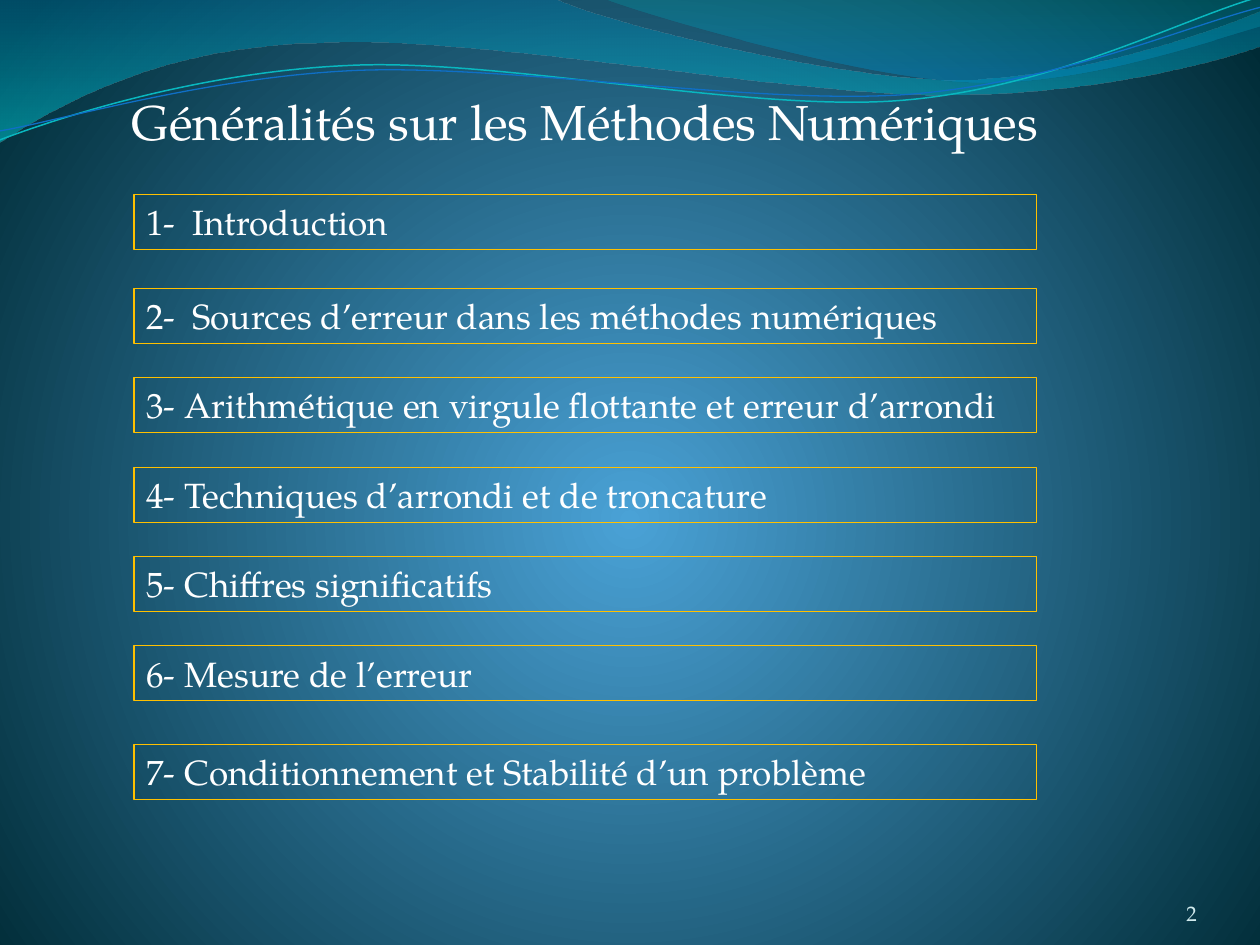
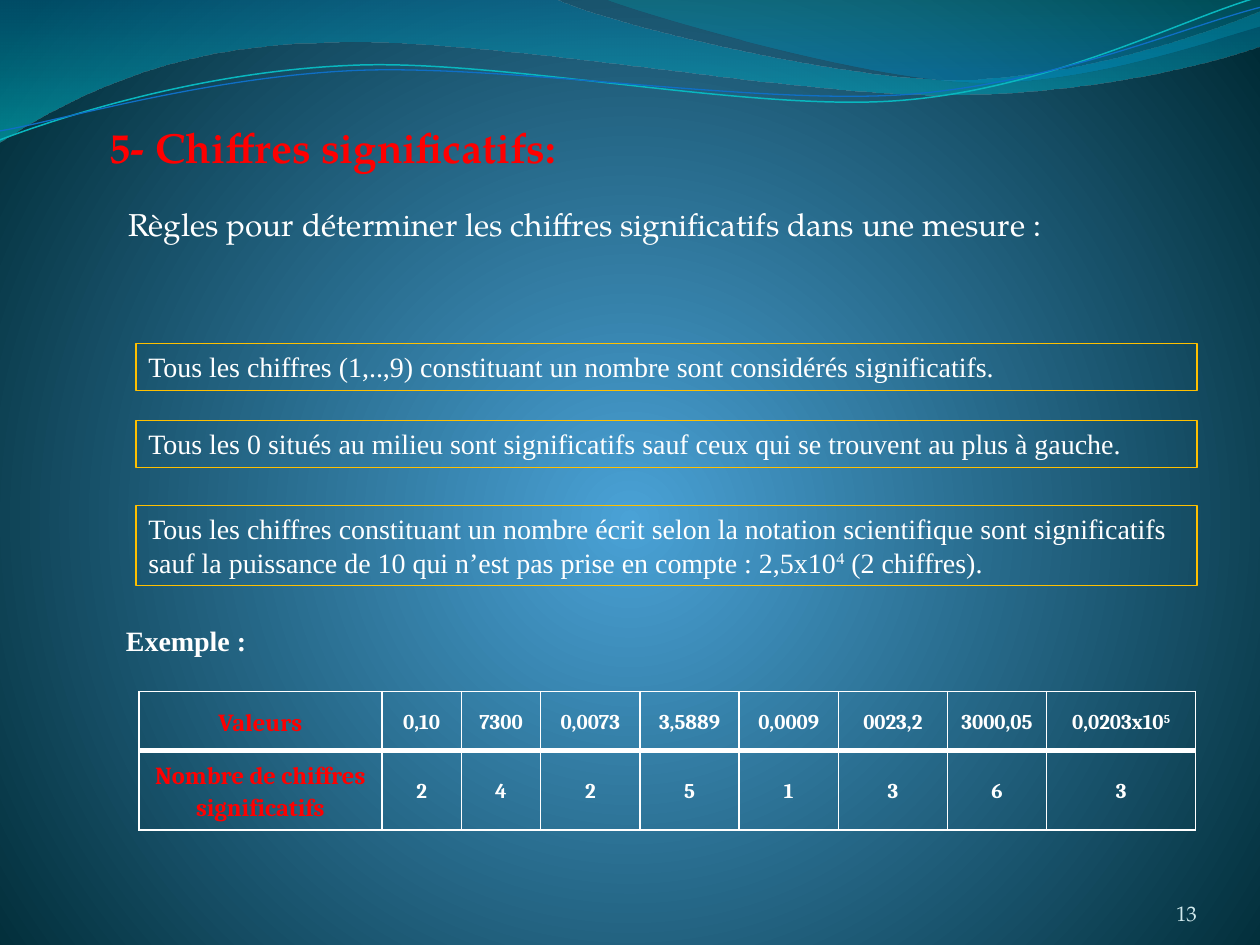
from dataclasses import dataclass

from lxml.etree import SubElement
from pptx import Presentation
from pptx.dml.color import RGBColor
from pptx.enum.shapes import MSO_SHAPE
from pptx.enum.text import MSO_ANCHOR, MSO_AUTO_SIZE, PP_ALIGN
from pptx.oxml.ns import qn
from pptx.util import Cm, Pt


@dataclass(frozen=True)
class Theme:
    white: str = "FFFFFF"
    red: str = "FF0000"
    gold: str = "FFC000"
    pale: str = "D1EAED"
    background: tuple = ((0, "4AA2D6", 100), (100, "002B36", 100))
    main_font: str = "TeX Gyre Pagella"
    rule_font: str = "Times New Roman"
    table_font: str = "Cambria"
    title: int = 28
    heading: int = 24
    chapter: int = 20
    intro: int = 18
    rule: int = 16
    table_head: int = 14
    small: int = 12


THEME = Theme()

# Positions in centimetres; text between two ^ is raised.
OUTLINE_TITLE = "Généralités sur les Méthodes Numériques"
CHAPTERS = [
    (3.92, "1-\tIntroduction"),
    (5.82, "2-\tSources d’erreur dans les méthodes numériques"),
    (7.61, "3- Arithmétique en virgule flottante et erreur d’arrondi"),
    (9.42, "4- Techniques d’arrondi et de troncature"),
    (11.22, "5- Chiffres significatifs"),
    (13.02, "6- Mesure de l’erreur"),
    (15.01, "7- Conditionnement et Stabilité d’un problème"),
]
NUMBER_TAB = 0.93

DIGITS_TITLE = "5- Chiffres significatifs:"
DIGITS_INTRO = "Règles pour déterminer les chiffres significatifs dans une mesure :"
RULES = [
    (6.93, 0.94, "Tous les chiffres (1,..,9) constituant un nombre sont considérés significatifs."),
    (8.48, 0.94, "Tous les 0 situés au milieu sont significatifs sauf ceux qui se trouvent "
                 "au plus à gauche."),
    (10.19, 1.62, "Tous les chiffres constituant un nombre écrit selon la notation scientifique "
                  "sont significatifs sauf la puissance de 10 qui n’est pas prise en compte : "
                  "2,5x10^4^ (2 chiffres)."),
]
EXAMPLE_LABEL = "Exemple :"
EXAMPLES = [
    ["Valeurs", "0,10", "7300", "0,0073", "3,5889", "0,0009", "0023,2", "3000,05", "0,0203x10^5^"],
    ["Nombre de chiffres significatifs", "2", "4", "2", "5", "1", "3", "6", "3"],
]
COLUMN_WIDTHS = [4.9, 1.6, 1.6, 2, 2, 2, 2.2, 2, 3]
ROW_HEIGHTS = [1.19, 1.6]

# Each wave: start, then steps of one point (line) or three points (Bézier curve).
WAVE_BANDS = [
    ((0, 0),
     [[(11.18, -0.03)],
      [(12.09, 0.43), (16.87, 1.6), (19.25, 1.6)],
      [(21.67, 1.6), (24.33, 0.66), (25.4, 0.23)],
      [(25.43, 0.91)],
      [(24.97, 1.12), (22.1, 1.93), (18.95, 1.91)],
      [(15.8, 1.91), (9.7, 0.71), (6.53, 0.86)],
      [(3.28, 0.89), (1.17, 2.11), (-0.03, 2.87)],
      [(0, 0)]],
     ((0, "0074A0", 45), (100, "00C4CD", 55)), 90),
    ((12.17, -0.03),
     [[(12.93, 0.28), (17.32, 1.57), (19.53, 1.65)],
      [(21.74, 1.75), (24.41, 0.81), (25.4, 0.53)],
      [(25.4, 0)],
      [(12.17, -0.03)]],
     ((20, "008ABF", 45), (100, "00A0A8", 30)), 270),
]
WAVE_LINES = [
    ((0, 2.82),
     [[(1.22, 2.36), (4.01, 1.45), (7.04, 1.32)],
      [(10.03, 1.17), (15.06, 2.26), (18.11, 2.03)],
      [(21.16, 1.8), (23.83, 0.38), (25.35, -0.05)]], "09B7BF", 0.85),
    ((0, 2.64),
     [[(1.19, 2.44), (4.17, 1.55), (7.19, 1.42)],
      [(10.24, 1.3), (15.16, 2.11), (18.21, 1.91)],
      [(21.23, 1.7), (23.9, 0.53), (25.4, 0.15)]], "0F6FC6", 0.75),
]


def color(value):
    return RGBColor.from_string(value)


def set_gradient(properties, stops, angle=None):
    """Replace the empty fill by a gradient: linear at an angle, else circular."""
    gradient = properties.makeelement(qn("a:gradFill"), {"rotWithShape": "1"})
    stop_list = SubElement(gradient, qn("a:gsLst"))
    for position, value, opacity in stops:
        stop = SubElement(stop_list, qn("a:gs"), pos=str(position * 1000))
        stop_color = SubElement(stop, qn("a:srgbClr"), val=value)
        if opacity < 100:
            SubElement(stop_color, qn("a:alpha"), val=str(opacity * 1000))
    if angle is None:
        circle = SubElement(gradient, qn("a:path"), {"path": "circle"})
        SubElement(circle, qn("a:fillToRect"), l="50000", t="55000", r="50000", b="45000")
    else:
        SubElement(gradient, qn("a:lin"), ang=str(angle * 60000), scaled="1")
    properties.replace(properties.find(qn("a:noFill")), gradient)


def add_wave(slide, start, steps, close):
    """Lay out every point with line segments, then merge triples into curves."""
    builder = slide.shapes.build_freeform(Cm(start[0]), Cm(start[1]))
    points = [(Cm(x), Cm(y)) for step in steps for x, y in step]
    builder.add_line_segments(points, close=close)
    shape = builder.convert_to_shape()
    segments = iter(list(shape._element.iter(qn("a:lnTo"))))
    for step in steps:
        members = [next(segments) for _ in step]
        if len(members) == 3:
            curve = members[0].makeelement(qn("a:cubicBezTo"), {})
            members[0].addprevious(curve)
            for member in members:
                curve.append(member[0])
                member.getparent().remove(member)
    shape.shadow.inherit = False
    shape.fill.background()
    return shape


def write(text_frame, text, size, font=THEME.main_font, ink=THEME.white, bold=False,
          alignment=PP_ALIGN.LEFT):
    paragraph = text_frame.paragraphs[0]
    paragraph.alignment = alignment
    if "\t" in text:
        tabs = SubElement(paragraph._p.get_or_add_pPr(), qn("a:tabLst"))
        SubElement(tabs, qn("a:tab"), pos=str(Cm(NUMBER_TAB)), algn="l")
    for index, piece in enumerate(text.split("^")):
        run = paragraph.add_run()
        run.text = piece
        run.font.name = font
        run.font.size = Pt(size)
        run.font.bold = bold
        run.font.color.rgb = color(ink)
        if index % 2:
            run.font._element.set("baseline", "30000")
    return paragraph


def add_text(slide, place, text, size, **style):
    box = slide.shapes.add_textbox(*map(Cm, place))
    box.text_frame.word_wrap = True
    write(box.text_frame, text, size, **style)
    return box


def add_framed_text(slide, place, text, size, line_width, **style):
    shape = slide.shapes.add_shape(MSO_SHAPE.RECTANGLE, *map(Cm, place))
    shape.shadow.inherit = False
    shape.fill.background()
    shape.line.color.rgb = color(THEME.gold)
    shape.line.width = Pt(line_width)
    text_frame = shape.text_frame
    text_frame.word_wrap = True
    text_frame.vertical_anchor = MSO_ANCHOR.TOP
    text_frame.auto_size = MSO_AUTO_SIZE.SHAPE_TO_FIT_TEXT
    write(text_frame, text, size, **style)


def decorate_master(presentation, slide):
    """Give the master its background and the waves, which are drawn on a slide first."""
    master = presentation.slide_master
    master.background.fill.background()
    set_gradient(master.element.find(f".//{qn('p:bgPr')}"), THEME.background)
    waves = []
    for start, steps, stops, angle in WAVE_BANDS:
        band = add_wave(slide, start, steps, close=True)
        band.line.fill.background()
        set_gradient(band._element.spPr, stops, angle)
        waves.append(band)
    for start, steps, ink, width in WAVE_LINES:
        wave = add_wave(slide, start, steps, close=False)
        wave.line.color.rgb = color(ink)
        wave.line.width = Pt(width)
        waves.append(wave)
    for wave in waves:
        master.shapes._spTree.append(wave._element)


def add_slide(presentation, number):
    """Add a blank slide with its page number."""
    slide = presentation.slides.add_slide(presentation.slide_layouts[6])
    box = add_text(slide, (22.02, 17.65, 2.11, 1.02), str(number), THEME.small,
                   ink=THEME.pale, alignment=PP_ALIGN.RIGHT)
    text_frame = box.text_frame
    text_frame.vertical_anchor = MSO_ANCHOR.BOTTOM
    text_frame.margin_left = text_frame.margin_right = 0
    text_frame.margin_top = text_frame.margin_bottom = 0
    return slide


def set_borders(cell, widths):
    properties = cell._tc.get_or_add_tcPr()
    for index, (side, width) in enumerate(widths.items()):
        border = properties.makeelement(qn(f"a:ln{side}"), {"w": str(Pt(width))})
        fill = SubElement(border, qn("a:solidFill"))
        SubElement(fill, qn("a:srgbClr"), val=THEME.white)
        properties.insert(index, border)


def add_example_table(slide):
    frame = slide.shapes.add_table(len(EXAMPLES), len(COLUMN_WIDTHS), Cm(2.8), Cm(13.94),
                                   Cm(sum(COLUMN_WIDTHS)), Cm(sum(ROW_HEIGHTS)))
    table = frame.table
    table.first_row = table.horz_banding = False
    for column, width in zip(table.columns, COLUMN_WIDTHS):
        column.width = Cm(width)
    for row_index, (row, height) in enumerate(zip(table.rows, ROW_HEIGHTS)):
        row.height = Cm(height)
        top, bottom = (1, 3) if row_index == 0 else (3, 1)
        for column_index, cell in enumerate(row.cells):
            is_label = column_index == 0
            cell.fill.background()
            cell.vertical_anchor = MSO_ANCHOR.MIDDLE
            cell.margin_left = cell.margin_right = Cm(0.18)
            cell.margin_top = cell.margin_bottom = 0
            paragraph = write(cell.text_frame, EXAMPLES[row_index][column_index],
                              THEME.table_head if is_label else THEME.small,
                              font=THEME.table_font, bold=True, alignment=PP_ALIGN.CENTER,
                              ink=THEME.red if is_label else THEME.white)
            paragraph.line_spacing = 1.15
            set_borders(cell, {"L": 1, "R": 1, "T": top, "B": bottom})


def build_outline(presentation):
    slide = add_slide(presentation, 2)
    add_text(slide, (2.41, 1.73, 18.95, 1.45), OUTLINE_TITLE, THEME.title)
    for top, chapter in CHAPTERS:
        add_framed_text(slide, (2.7, top, 18.2, 1.11), chapter, THEME.chapter, line_width=0)
    return slide


def build_digits(presentation):
    slide = add_slide(presentation, 13)
    add_text(slide, (1.96, 2.32, 10.54, 1.27), DIGITS_TITLE, THEME.heading,
             ink=THEME.red, bold=True)
    add_text(slide, (2.34, 4.01, 19.66, 1.02), DIGITS_INTRO, THEME.intro)
    for top, height, rule in RULES:
        add_framed_text(slide, (2.74, top, 21.39, height), rule, THEME.rule,
                        line_width=0.75, font=THEME.rule_font)
    add_text(slide, (2.29, 12.45, 3.61, 0.94), EXAMPLE_LABEL, THEME.rule,
             font=THEME.rule_font, bold=True)
    add_example_table(slide)


def main():
    presentation = Presentation()
    presentation.slide_width, presentation.slide_height = Cm(25.4), Cm(19.05)
    outline = build_outline(presentation)
    decorate_master(presentation, outline)
    build_digits(presentation)
    presentation.save("out.pptx")


if __name__ == "__main__":
    main()
